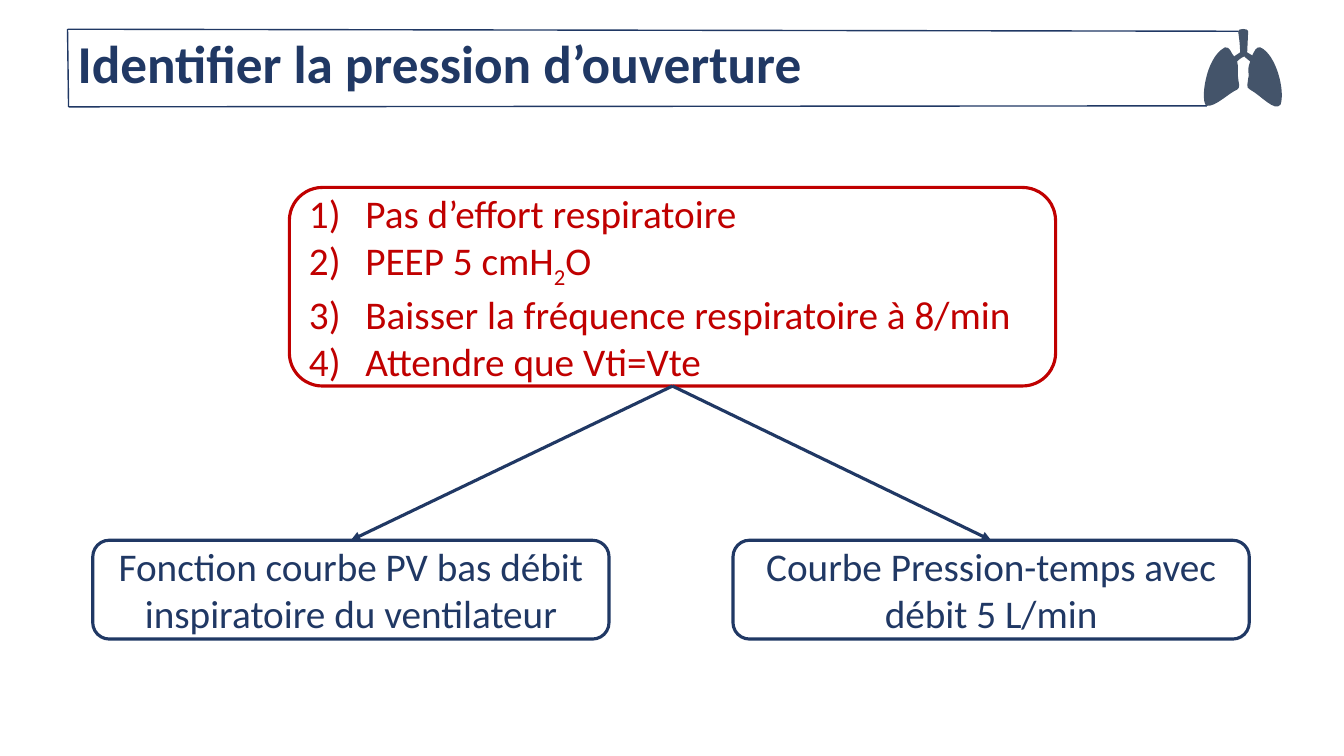
"""Slide on how to identify the opening pressure, with two ways to measure it."""
from dataclasses import dataclass

from lxml.etree import SubElement
from pptx import Presentation
from pptx.dml.color import RGBColor as RGB
from pptx.enum.shapes import MSO_CONNECTOR as LINK, MSO_SHAPE as SHAPE
from pptx.enum.text import MSO_ANCHOR as ANCHOR, MSO_AUTO_SIZE as FIT, PP_ALIGN as ALIGN
from pptx.oxml.ns import qn
from pptx.util import Inches, Pt


@dataclass(frozen=True)
class Theme:
    font: str = "Calibri"
    navy: RGB = RGB(0x20, 0x38, 0x64)
    red: RGB = RGB(0xC0, 0, 0)
    slate: RGB = RGB(0x44, 0x54, 0x6A)
    white: RGB = RGB(0xFF, 0xFF, 0xFF)
    title_size: int = 38
    body_size: int = 28
    thick: float = 2.25
    thin: float = 1


THEME = Theme()
TITLE = "Identifier la pression d’ouverture"
STEPS = [
    ["Pas d’effort respiratoire"],
    ["PEEP 5 cmH", "2", "O"],
    ["Baisser la fréquence respiratoire à 8/min"],
    ["Attendre que Vti=Vte"],
]
METHODS = [
    "Fonction courbe PV bas débit inspiratoire du ventilateur",
    "Courbe Pression-temps avec débit 5 L/min",
]

TITLE_AREA = (0.67, 0.3, 12, 0.72)
STEPS_AREA = (2.87, 1.86, 7.6, 1.97)
METHOD_LEFT, METHOD_TOP, METHOD_PITCH = 0.92, 5.36, 6.35
METHOD_SIZE = (5.12, 0.98)
STEP_INDENT = 0.56
FRAME_LINES = [
    ((0.68, 1.06), (11.97, 1.05)),
    ((0.67, 0.29), (12.28, 0.31)),
    ((0.68, 1.06), (0.67, 0.29)),
]
LUNGS_AREA = (11.94, 0.29, 0.77, 0.77)
LUNGS_START = (12.28, 0.31)
LUNGS_OUTLINE = [
    [(12.28, 0.28), (12.38, 0.28), (12.38, 0.31)],
    [(12.37, 0.52)],
    [(12.42, 0.55)],
    [(12.44, 0.51), (12.46, 0.46), (12.5, 0.47)],
    [(12.66, 0.54), (12.75, 0.91), (12.7, 1.04)],
    [(12.64, 1.11), (12.51, 0.95), (12.4, 0.89)],
    [(12.35, 0.87), (12.38, 0.82), (12.38, 0.78)],
    [(12.4, 0.74), (12.36, 0.71), (12.4, 0.61)],
    [(12.38, 0.6), (12.37, 0.58), (12.34, 0.56)],
    [(12.3, 0.58), (12.29, 0.59), (12.27, 0.61)],
    [(12.29, 0.67), (12.27, 0.74), (12.28, 0.77)],
    [(12.28, 0.81), (12.31, 0.87), (12.27, 0.89)],
    [(12.19, 0.92), (12.06, 1.06), (11.97, 1.05)],
    [(11.9, 1.03), (11.95, 0.57), (12.15, 0.47)],
    [(12.2, 0.46), (12.21, 0.53), (12.24, 0.56)],
    [(12.3, 0.52)],
    [(12.3, 0.46), (12.29, 0.37), (12.28, 0.31)],
]


def style_font(font, size, color, bold=False):
    font.name, font.size, font.bold = THEME.font, Pt(size), bold
    font.color.rgb = color


def add_title(slide):
    title = slide.shapes.title
    title.left, title.top, title.width, title.height = map(Inches, TITLE_AREA)
    frame = title.text_frame
    frame.text = TITLE
    frame.word_wrap, frame.auto_size = True, FIT.NONE
    frame.vertical_anchor = ANCHOR.MIDDLE
    heading = frame.paragraphs[0]
    heading.alignment, heading.line_spacing = ALIGN.LEFT, 0.9
    style_font(heading.runs[0].font, THEME.title_size, THEME.navy, True)


def add_box(shapes, area, color):
    box = shapes.add_shape(SHAPE.ROUNDED_RECTANGLE, *map(Inches, area))
    box.shadow.inherit = False
    box.fill.solid()
    box.fill.fore_color.rgb = THEME.white
    box.line.color.rgb, box.line.width = color, Pt(THEME.thick)
    box.text_frame.word_wrap = True
    box.text_frame.vertical_anchor = ANCHOR.MIDDLE
    return box


def add_steps(shapes):
    box = add_box(shapes, STEPS_AREA, THEME.red)
    frame = box.text_frame
    for number, parts in enumerate(STEPS):
        step = frame.add_paragraph() if number else frame.paragraphs[0]
        step.alignment = ALIGN.LEFT
        props = step._p.get_or_add_pPr()
        props.set("marL", str(Inches(STEP_INDENT)))
        props.set("indent", str(-Inches(STEP_INDENT)))
        SubElement(props, qn("a:buFont"), typeface="+mj-lt")
        SubElement(props, qn("a:buAutoNum"), type="arabicParenR")
        for position, part in enumerate(parts):
            run = step.add_run()
            run.text = part
            style_font(run.font, THEME.body_size, THEME.red)
            if position == 1:
                run._r.get_or_add_rPr().set("baseline", "-25000")
    return box


def add_method(shapes, column, label):
    left = METHOD_LEFT + column * METHOD_PITCH
    box = add_box(shapes, (left, METHOD_TOP, *METHOD_SIZE), THEME.navy)
    box.text_frame.text = label
    method = box.text_frame.paragraphs[0]
    method.alignment = ALIGN.CENTER
    style_font(method.runs[0].font, THEME.body_size, THEME.navy)
    return box


def add_line(shapes, start, end, width):
    line = shapes.add_connector(LINK.STRAIGHT, *map(Inches, (*start, *end)))
    line.line.color.rgb, line.line.width = THEME.navy, Pt(width)
    SubElement(line._element.spPr, qn("a:effectLst"))
    return line


def add_arrow(shapes, source, target):
    arrow = add_line(shapes, (0, 0), (1, 1), THEME.thick)
    arrow.begin_connect(source, 2)
    arrow.end_connect(target, 0)
    SubElement(arrow.line._get_or_add_ln(), qn("a:tailEnd"), type="triangle")


def add_lungs(shapes):
    left, top, width, height = map(Inches, LUNGS_AREA)
    builder = shapes.build_freeform(*map(Inches, LUNGS_START))
    builder.add_line_segments([tuple(map(Inches, part[-1])) for part in LUNGS_OUTLINE])
    lungs = builder.convert_to_shape()
    lungs.left, lungs.top, lungs.width, lungs.height = left, top, width, height
    outline = next(lungs._element.iter(qn("a:path")))
    for command in list(outline):
        outline.remove(command)
    outline.set("w", str(width))
    outline.set("h", str(height))
    for tag, points in [("a:moveTo", [LUNGS_START])] + [
        ("a:cubicBezTo" if len(part) == 3 else "a:lnTo", part) for part in LUNGS_OUTLINE
    ]:
        command = SubElement(outline, qn(tag))
        for x, y in points:
            SubElement(command, qn("a:pt"), x=str(Inches(x) - left), y=str(Inches(y) - top))
    SubElement(outline, qn("a:close"))
    lungs.shadow.inherit = False
    lungs.fill.solid()
    lungs.fill.fore_color.rgb = THEME.slate
    lungs.line.fill.background()


def main():
    deck = Presentation()
    deck.slide_width, deck.slide_height = Inches(13.33), Inches(7.5)
    slide = deck.slides.add_slide(deck.slide_layouts[5])
    add_title(slide)
    steps = add_steps(slide.shapes)
    methods = [add_method(slide.shapes, *entry) for entry in enumerate(METHODS)]
    for method in methods:
        add_arrow(slide.shapes, steps, method)
    banner = slide.shapes.add_group_shape().shapes
    for start, end in FRAME_LINES:
        add_line(banner, start, end, THEME.thin)
    add_lungs(banner)
    deck.save("out.pptx")


if __name__ == "__main__":
    main()
